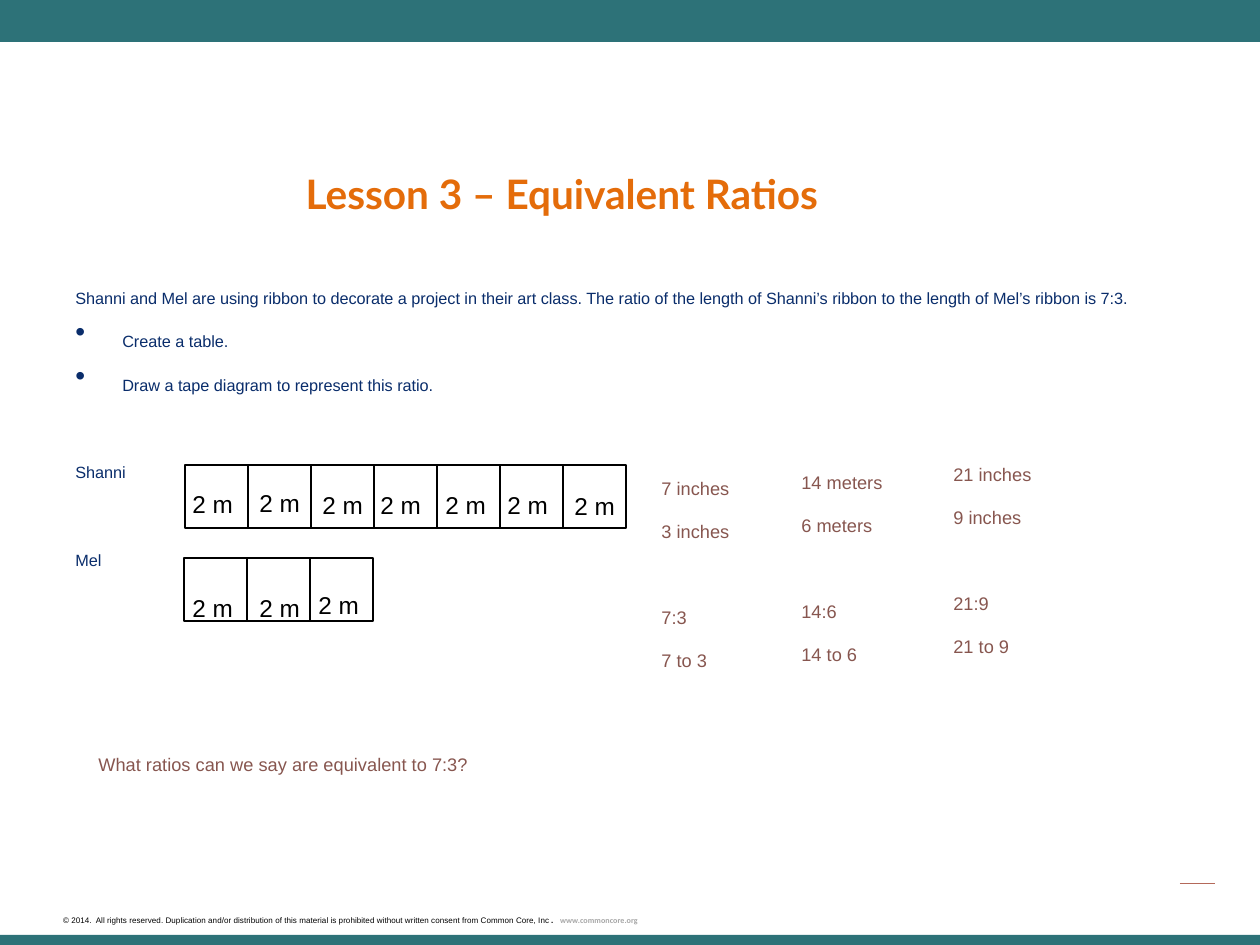
import pptx
import pptx.util
import pptx.dml.color
import pptx.enum.shapes
import pptx.enum.text
import lxml.etree
import pptx.oxml.ns

RGB = pptx.dml.color.RGBColor
TEAL = RGB(0x2D, 0x72, 0x78)
RUST = RGB(0xB4, 0x69, 0x5A)
ORANGE = RGB(0xE4, 0x6C, 0x0A)
NAVY = RGB(0x0A, 0x2D, 0x6B)
BROWN = RGB(0x87, 0x56, 0x4F)
GREY = RGB(0xA6, 0xA6, 0xA6)
BLACK = RGB(0, 0, 0)

# Content: places are left, top, width, height in px
BARS = [(0, 0, 1260, 42), (0, 935, 1260, 10)]
RULE = (1180, 883, 1215, 883)

TITLE = "Lesson 3 – Equivalent Ratios"
# text, bulleted, hanging, space before in points
BODY = [
    ("Shanni and Mel are using ribbon to decorate a project in their art class. "
     "The ratio of the length of Shanni’s ribbon to the length of Mel’s ribbon is 7:3.",
     False, True, 0),
    ("Create a table.", True, True, 3.2),
    ("Draw a tape diagram to represent this ratio.", True, True, 3.2),
    ("Shanni", False, False, 28),
    ("Mel", False, False, 28),
]
UNIT = "2 m"
CELL = 63
# left and top of the tape, then left and top of each unit label
TAPES = [
    (185, 465, [(180, 455), (247, 454), (310, 456), (368, 456),
                (433, 456), (495, 456), (562, 457)]),
    (184, 558, [(180, 559), (247, 559), (306, 556)]),
]
RATIOS = [
    ((941, 436, 224, 229), ["21 inches", "9 inches", "21:9", "21 to 9"]),
    ((789, 444, 302, 229), ["14 meters", "6 meters", "14:6", "14 to 6"]),
    ((649, 450, 261, 229), ["7 inches", "3 inches", "7:3", "7 to 3"]),
]
ASK = "What ratios can we say are equivalent to 7:3?"
LEGAL = ("© 2014.  All rights reserved. Duplication and/or distribution of this material "
         "is prohibited without written consent from Common Core, Inc")
SITE = "www.commoncore.org"

# Text formats
HEAD = dict(name="Lato", size=40, bold=True, color=ORANGE)
MAIN = dict(name="Arial", size=16, color=NAVY)
MARK = dict(name="Arial", size=24, color=BLACK)
NOTE = dict(name="Arial", size=18, color=BROWN)
FINE = dict(name="Arial", size=8, color=BLACK)
LINK = dict(name="Calibri", size=8, bold=True, color=GREY)


def px(n):
    return pptx.util.Emu(round(n * 914400 / 126))


def add_xml(elem, tag, **attrs):
    """Append an a: element with the given attributes."""
    texts = {key: str(val) for key, val in attrs.items()}
    return lxml.etree.SubElement(elem, pptx.oxml.ns.qn(f"a:{tag}"), texts)


def add_run(para, text, form):
    """Add a lowered run of text."""
    run = para.add_run()
    run.text = text
    for key, val in form.items():
        if key == "color":
            run.font.color.rgb = val
        else:
            setattr(run.font, key, pptx.util.Pt(val) if key == "size" else val)
    run._r.get_or_add_rPr().set("baseline", "-25000")


def add_box(slide, place, count=1):
    """Add a wrapped text box and return its frame and paragraphs."""
    frame = slide.shapes.add_textbox(*map(px, place)).text_frame
    frame.word_wrap = True
    for _ in range(count - 1):
        frame.add_paragraph()
    return frame, frame.paragraphs


def add_rect(slide, place, fill=None, line=None):
    kind = pptx.enum.shapes.MSO_SHAPE.RECTANGLE
    rect = slide.shapes.add_shape(kind, *map(px, place))
    rect.shadow.inherit = False
    if fill is None:
        rect.fill.background()
    else:
        rect.fill.solid()
        rect.fill.fore_color.rgb = fill
    if line is None:
        rect.line.fill.background()
    else:
        rect.line.color.rgb = line
        rect.line.width = pptx.util.Pt(0.75)


def main():
    deck = pptx.Presentation()
    deck.slide_width, deck.slide_height = px(1260), px(945)
    slide = deck.slides.add_slide(deck.slide_layouts[6])

    # Bars and short rule
    for place in BARS:
        add_rect(slide, place, fill=TEAL)
    rule = slide.shapes.add_connector(
        pptx.enum.shapes.MSO_CONNECTOR.STRAIGHT, *map(px, RULE))
    rule.line.color.rgb = RUST
    rule.line.width = pptx.util.Pt(0.5)
    add_xml(rule._element.spPr, "effectLst")

    # Footer, with the web address at a tab stop
    frame, (para,) = add_box(slide, (63, 906, 761, 16))
    for side in ("left", "top", "right", "bottom"):
        setattr(frame, f"margin_{side}", 0)
    stops = add_xml(para._p.get_or_add_pPr(), "tabLst")
    add_xml(stops, "tab", pos=px(497), algn="l")
    add_run(para, LEGAL, FINE)
    add_run(para, ".\t", dict(FINE, bold=True))
    add_run(para, SITE, LINK)

    # Title
    frame, (para,) = add_box(slide, (62, 113, 1000, 113))
    frame.vertical_anchor = pptx.enum.text.MSO_ANCHOR.MIDDLE
    para.alignment = pptx.enum.text.PP_ALIGN.CENTER
    add_run(para, TITLE, HEAD)

    # Problem, tasks and tape names
    frame, paras = add_box(slide, (63, 263, 1134, 554), len(BODY))
    for para, (text, dot, hang, gap) in zip(paras, BODY):
        props = para._p.get_or_add_pPr()
        if hang:
            props.set("marL", str(px(47)))
            props.set("indent", str(px(-47)))
        if gap:
            para.space_before = pptx.util.Pt(gap)
        if dot:
            add_xml(props, "buFont", typeface="Arial")
            add_xml(props, "buChar", char="•")
        add_run(para, text, MAIN)

    # Tape diagram: cells first, then unit labels
    for left, top, marks in TAPES:
        for i in range(len(marks)):
            add_rect(slide, (left + i * CELL, top, CELL, CELL), line=BLACK)
    for left, top, marks in TAPES:
        for spot in marks:
            frame, (para,) = add_box(slide, (*spot, 87, 81))
            add_run(para, UNIT, MARK)

    # Ratio columns: lengths, a gap, then ratios
    for place, lines in RATIOS:
        frame, paras = add_box(slide, place, len(lines))
        for para, text in zip(paras, lines):
            add_run(para, text, NOTE)
        paras[2].space_before = pptx.util.Pt(24.6)

    # Closing question
    frame, (para,) = add_box(slide, (86, 726, 669, 50))
    add_run(para, ASK, NOTE)

    deck.save("out.pptx")


if __name__ == "__main__":
    main()
